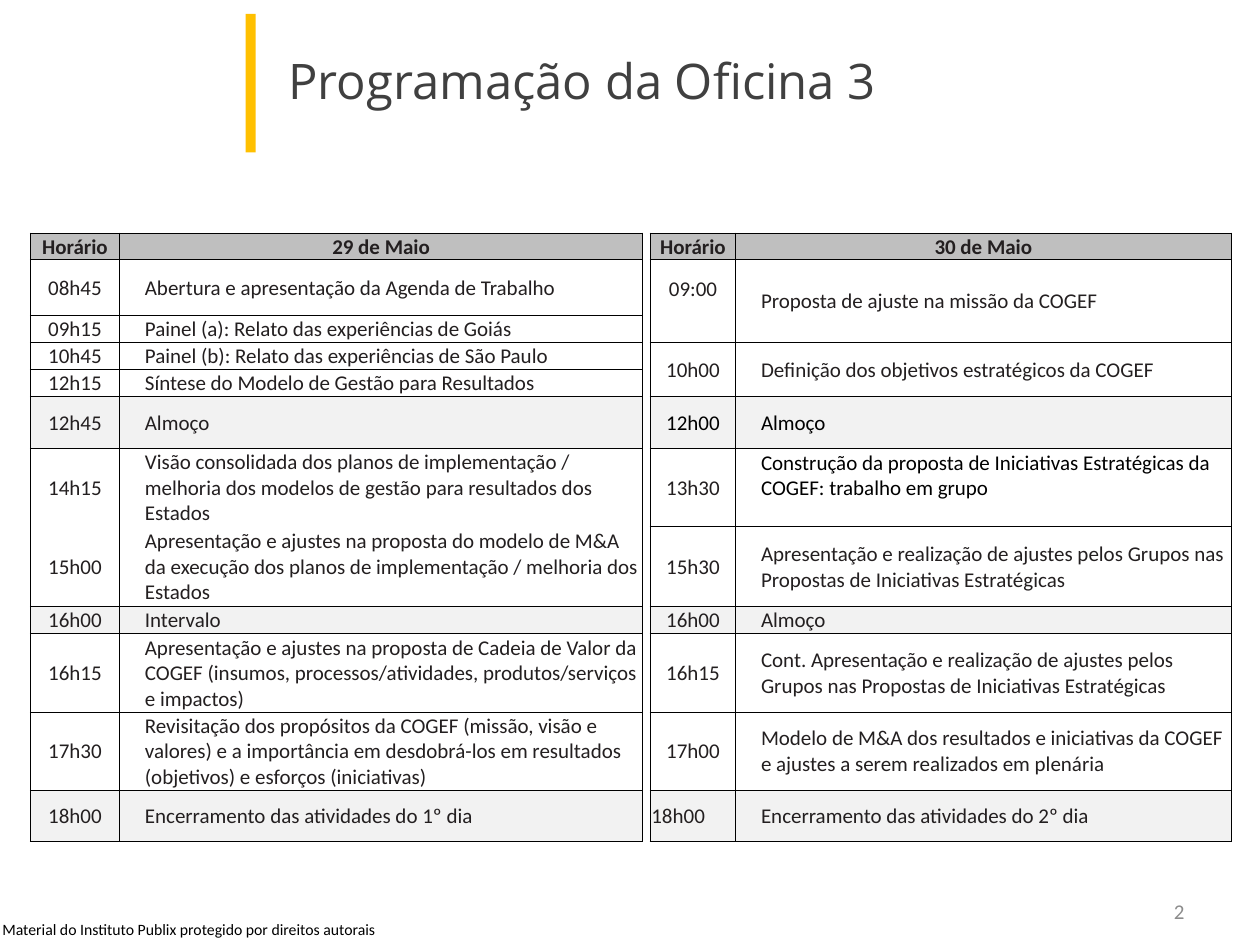
from dataclasses import dataclass

from lxml.etree import SubElement
from pptx import Presentation
from pptx.dml.color import RGBColor
from pptx.enum.shapes import MSO_SHAPE as Shape
from pptx.enum.text import MSO_ANCHOR as Anchor, PP_ALIGN as Align
from pptx.oxml.ns import qn
from pptx.util import Inches, Pt

COLORS = {
    "black": "000000", "ink": "231F20", "title": "404040", "number": "8C8C8C",
    "accent": "FFC000", "header": "BFBFBF", "break": "F2F2F2", "white": "FFFFFF",
}
COLUMN_WIDTHS = [0.71, 4.15, 0.06, 0.68, 3.93]
ROW_HEIGHTS = [0.21, 0.44, 0.22, 0.21, 0.22, 0.41, 0.62, 0, 0.63, 0.22, 0.62, 0.62, 0.41]
LAST_ROW = len(ROW_HEIGHTS) - 1
GAP_COLUMN = 2
THIN, THICK = 0.5, 1


@dataclass
class Session:
    row: int
    time: str
    topic: str
    span: int = 1
    fill: str = "white"
    time_color: str = "ink"
    topic_color: str = "ink"
    time_align: Align = Align.CENTER
    time_bottom: float = 0
    topic_bottom: float = 0
    top_line: float = THIN
    bottom_line: float = THIN


FIRST_DAY = [
    Session(0, "Horário", "29 de Maio", fill="header"),
    Session(1, "08h45", "Abertura e apresentação da Agenda de Trabalho"),
    Session(2, "09h15", "Painel (a): Relato das experiências de Goiás"),
    Session(3, "10h45", "Painel (b): Relato das experiências de São Paulo"),
    Session(4, "12h15", "Síntese do Modelo de Gestão para Resultados"),
    Session(5, "12h45", "Almoço", fill="break"),
    Session(6, "14h15", "Visão consolidada dos planos de implementação / melhoria dos "
            "modelos de gestão para resultados dos Estados", bottom_line=0),
    Session(7, "15h00", "Apresentação e ajustes na proposta do modelo de M&A da execução "
            "dos planos de implementação / melhoria dos Estados", span=2, top_line=0),
    Session(9, "16h00", "Intervalo", fill="break"),
    Session(10, "16h15", "Apresentação e ajustes na proposta de Cadeia de Valor da COGEF "
            "(insumos, processos/atividades, produtos/serviços e impactos)"),
    Session(11, "17h30", "Revisitação dos propósitos da COGEF (missão, visão e valores) e a "
            "importância em desdobrá-los em resultados (objetivos) e esforços (iniciativas)"),
    Session(12, "18h00", "Encerramento das atividades do 1º dia", fill="break"),
]
SECOND_DAY = [
    Session(0, "Horário", "30 de Maio", fill="header"),
    Session(1, "09:00", "Proposta de ajuste na missão da COGEF", span=2, time_bottom=0.2),
    Session(3, "10h00", "Definição dos objetivos estratégicos da COGEF", span=2),
    Session(5, "12h00", "Almoço", fill="break", time_color="black", topic_color="black"),
    Session(6, "13h30", "Construção da proposta de Iniciativas Estratégicas da COGEF: "
            "trabalho em grupo", span=2, topic_color="black", topic_bottom=0.2),
    Session(8, "15h30", "Apresentação e realização de ajustes pelos Grupos nas Propostas "
            "de Iniciativas Estratégicas"),
    Session(9, "16h00", "Almoço", fill="break"),
    Session(10, "16h15", "Cont. Apresentação e realização de ajustes pelos Grupos nas "
            "Propostas de Iniciativas Estratégicas"),
    Session(11, "17h00", "Modelo de M&A dos resultados e iniciativas da COGEF e ajustes a "
            "serem realizados em plenária"),
    Session(12, "18h00", "Encerramento das atividades do 2º dia", fill="break",
            time_align=Align.LEFT, bottom_line=THICK),
]


def rgb(name: str) -> RGBColor:
    return RGBColor.from_string(COLORS[name])


def style_text(text_frame, text: str, size: float, color: str, font: str = "Calibri",
               align: Align = Align.LEFT, bold: bool = False) -> None:
    text_frame.text = text
    paragraph = text_frame.paragraphs[0]
    paragraph.alignment = align
    run_font = paragraph.runs[0].font
    run_font.name, run_font.size, run_font.bold = font, Pt(size), bold
    run_font.color.rgb = rgb(color)


def set_borders(cell, left: float, right: float, top: float, bottom: float) -> None:
    properties = cell._tc.get_or_add_tcPr()
    for side, width in zip("LRTB", (left, right, top, bottom)):
        line = SubElement(properties, qn(f"a:ln{side}"), w=str(Pt(width)))
        if width:
            fill = SubElement(line, qn("a:solidFill"))
            SubElement(fill, qn("a:srgbClr"), val=COLORS["black"])
        else:
            SubElement(line, qn("a:noFill"))


def set_margins(cell, margin: float, bottom: float = 0) -> None:
    cell.margin_left = cell.margin_right = cell.margin_top = Inches(margin)
    cell.margin_bottom = Inches(bottom)


def shrink_empty_cell(cell) -> None:
    set_margins(cell, 0)
    SubElement(cell.text_frame.paragraphs[0]._p, qn("a:endParaRPr"), sz="100")


def draw_cell(table, session: Session, column: int, is_time: bool) -> None:
    is_header = session.row == 0
    last = session.row + session.span - 1
    cell = table.cell(session.row, column)
    for row in range(session.row, last + 1):
        part = table.cell(row, column)
        set_borders(part, THIN, THIN,
                    session.top_line if row == session.row else 0, session.bottom_line)
        part.fill.solid()
        part.fill.fore_color.rgb = rgb(session.fill)
        if row > session.row:
            shrink_empty_cell(part)
    if session.span > 1:
        cell.merge(table.cell(last, column))
    set_margins(cell, 0.01, session.time_bottom if is_time else session.topic_bottom)
    cell.vertical_anchor = Anchor.MIDDLE
    topic_align = Align.CENTER if is_header else Align.LEFT
    style_text(cell.text_frame, session.time if is_time else session.topic, 12,
               session.time_color if is_time else session.topic_color,
               align=session.time_align if is_time else topic_align, bold=is_header)
    if not is_time and not is_header:
        properties = cell.text_frame.paragraphs[0]._p.get_or_add_pPr()
        properties.set("marL", str(Inches(0.19)))
        properties.set("indent", "0")


def draw_day(table, sessions: list[Session], first_column: int) -> None:
    for session in sessions:
        draw_cell(table, session, first_column, True)
        draw_cell(table, session, first_column + 1, False)


def draw_gap(table) -> None:
    for row in range(LAST_ROW + 1):
        cell = table.cell(row, GAP_COLUMN)
        set_borders(cell, THIN, THIN, 0, 0)
        cell.fill.background()
        shrink_empty_cell(cell)
    table.cell(7, GAP_COLUMN).merge(table.cell(8, GAP_COLUMN))


def draw_schedule(slide) -> None:
    table = slide.shapes.add_table(
        len(ROW_HEIGHTS), len(COLUMN_WIDTHS), Inches(0.24), Inches(1.85),
        Inches(sum(COLUMN_WIDTHS)), Inches(sum(ROW_HEIGHTS))).table
    table.first_row = table.horz_banding = False
    for column, width in zip(table.columns, COLUMN_WIDTHS):
        column.width = Inches(width)
    for row, height in zip(table.rows, ROW_HEIGHTS):
        row.height = Inches(height)
    draw_day(table, FIRST_DAY, 0)
    draw_gap(table)
    draw_day(table, SECOND_DAY, GAP_COLUMN + 1)


def main() -> None:
    presentation = Presentation()
    presentation.slide_width, presentation.slide_height = Inches(10), Inches(7.5)
    slide = presentation.slides.add_slide(presentation.slide_layouts[5])

    # Copyright line
    notice = slide.shapes.add_textbox(Inches(-0.08), Inches(7.25), Inches(3.21), Inches(0.25))
    notice.text_frame.word_wrap = False
    style_text(notice.text_frame, "Material do Instituto Publix protegido por direitos autorais",
               9, "black")

    # Title and accent bar
    bar = slide.shapes.add_shape(Shape.RECTANGLE, Inches(1.95), Inches(0.11),
                                 Inches(0.08), Inches(1.1))
    bar.shadow.inherit = False
    bar.fill.solid()
    bar.fill.fore_color.rgb = rgb("accent")
    bar.line.fill.background()
    title = slide.shapes.title
    title.left, title.top = Inches(2.19), Inches(0.29)
    title.width, title.height = Inches(7.31), Inches(0.69)
    title.text_frame.vertical_anchor = Anchor.MIDDLE
    style_text(title.text_frame, "Programação da Oficina 3", 28, "title", "Open Sans")

    # Slide number
    number = slide.shapes.add_textbox(Inches(7.17), Inches(7.03), Inches(2.33), Inches(0.4))
    number.text_frame.word_wrap = True
    number.text_frame.vertical_anchor = Anchor.MIDDLE
    style_text(number.text_frame, "2", 12, "number", align=Align.RIGHT)

    # Two-day schedule
    draw_schedule(slide)
    presentation.save("out.pptx")


if __name__ == "__main__":
    main()
